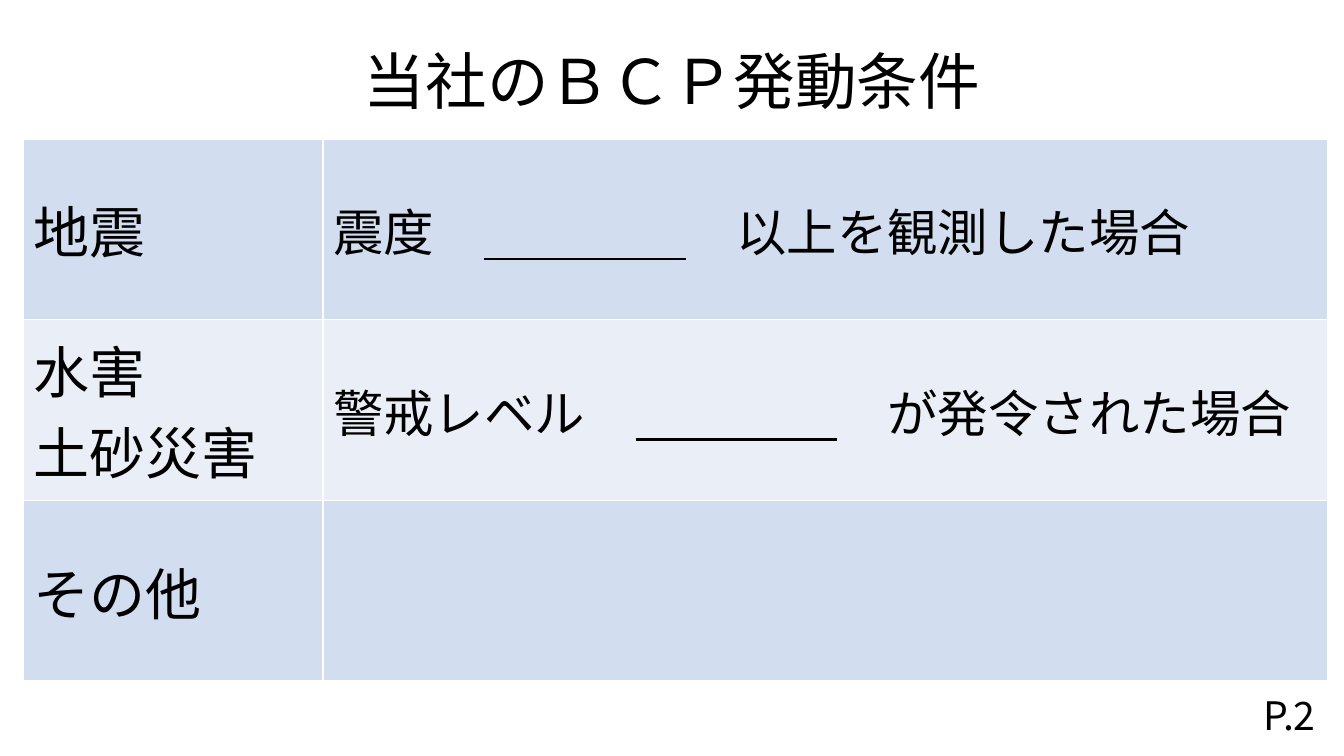
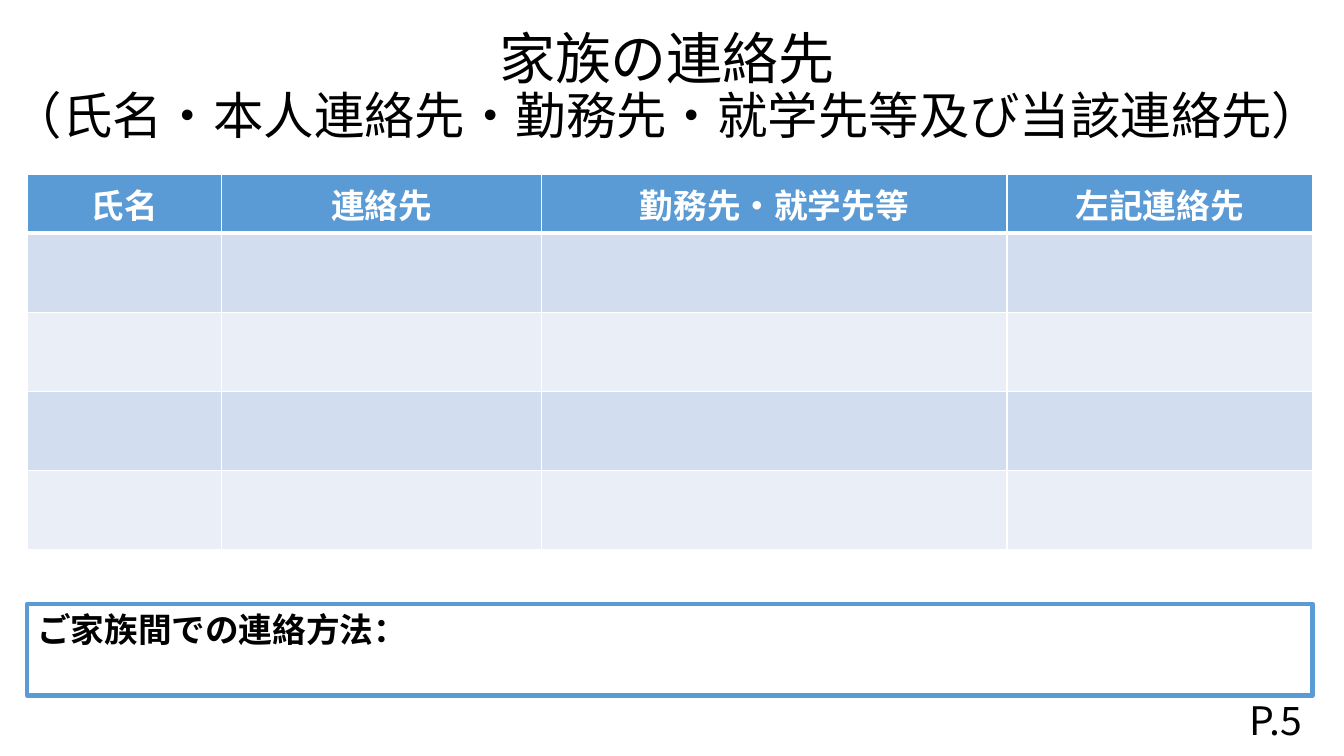
from dataclasses import dataclass

from lxml import etree
from pptx import Presentation
from pptx import util as u
from pptx.dml.color import RGBColor
from pptx.enum import shapes, text
from pptx.oxml import ns

SLIDE_WIDTH, SLIDE_HEIGHT = u.Inches(13.33), u.Inches(7.5)
TITLE_ONLY = 5


@dataclass(frozen=True)
class Theme:
    typeface: str = "Noto Sans CJK JP"
    ink: str = "000000"
    paper: str = "FFFFFF"
    accent: str = "5B9BD5"
    bands: tuple = ("D2DEEF", "EAEFF7")
    title: int = 44
    heading: int = 40
    body: int = 36
    page: int = 28
    label: int = 24
    rule: int = 1
    thick_rule: int = 3


THEME = Theme()


def region(left, top, width, height):
    """Turn percentages of the slide's size into a position and a size."""
    return (int(SLIDE_WIDTH * left / 100), int(SLIDE_HEIGHT * top / 100),
            int(SLIDE_WIDTH * width / 100), int(SLIDE_HEIGHT * height / 100))


def divide(total, weights):
    return [int(total * weight / sum(weights)) for weight in weights]


def set_fill(target, color):
    target.fill.solid()
    target.fill.fore_color.rgb = RGBColor.from_string(color)


def set_font(font, size, color=THEME.ink, bold=False):
    """Style Latin and East Asian characters alike."""
    font.size, font.bold = u.Pt(size), bold
    font.color.rgb = RGBColor.from_string(color)
    font.name = THEME.typeface
    etree.SubElement(font._element, ns.qn("a:ea"), typeface=THEME.typeface)


def write(frame, lines, size, color=THEME.ink, bold=False, align=text.PP_ALIGN.LEFT):
    """Write one paragraph a line; a line is a string or (before, blank, after)."""
    for index, line in enumerate(lines):
        paragraph = frame.add_paragraph() if index else frame.paragraphs[0]
        paragraph.alignment = align
        set_font(paragraph.font, size, color, bold)
        parts = (line,) if isinstance(line, str) else line
        for position, part in enumerate(parts):
            run = paragraph.add_run()
            run.text = part
            if position == 1:
                run.font.underline = True


def add_titled_slide(presentation, box, lines):
    """Add a slide whose title has one (text, size) pair a line."""
    slide = presentation.slides.add_slide(presentation.slide_layouts[TITLE_ONLY])
    title = slide.shapes.title
    title.left, title.top, title.width, title.height = region(*box)
    frame = title.text_frame
    frame.word_wrap, frame.auto_size = True, text.MSO_AUTO_SIZE.NONE
    frame.vertical_anchor = text.MSO_ANCHOR.MIDDLE
    paragraph = frame.paragraphs[0]
    paragraph.alignment, paragraph.line_spacing = text.PP_ALIGN.CENTER, 0.9
    for index, (words, size) in enumerate(lines):
        if index:
            paragraph.add_line_break()
        run = paragraph.add_run()
        run.text = words
        set_font(run.font, size)
    return slide


def set_borders(cell, bottom=THEME.rule):
    properties = cell._tc.get_or_add_tcPr()
    widths = {"lnL": THEME.rule, "lnR": THEME.rule, "lnT": THEME.rule, "lnB": bottom}
    for side, width in widths.items():
        line = etree.SubElement(properties, ns.qn(f"a:{side}"), w=str(u.Pt(width)))
        fill = etree.SubElement(line, ns.qn("a:solidFill"))
        etree.SubElement(fill, ns.qn("a:srgbClr"), val=THEME.paper)


def add_banded_table(slide, box, column_weights, row_weights, header=False):
    left, top, width, height = region(*box)
    table = slide.shapes.add_table(len(row_weights), len(column_weights),
                                   left, top, width, height).table
    table.first_row, table.horz_banding = header, True
    for column, size in zip(table.columns, divide(width, column_weights)):
        column.width = size
    for index, (row, size) in enumerate(zip(table.rows, divide(height, row_weights))):
        row.height = size
        is_header = header and index == 0
        color = THEME.accent if is_header else THEME.bands[(index - header) % 2]
        for cell in row.cells:
            set_borders(cell, THEME.thick_rule if is_header else THEME.rule)
            set_fill(cell, color)
    return table


def add_page_number(slide, left, top, number):
    frame = slide.shapes.add_textbox(*region(left, top, 22.5, 5.33)).text_frame
    frame.word_wrap, frame.vertical_anchor = True, text.MSO_ANCHOR.MIDDLE
    write(frame, [f"P.{number}"], THEME.page, align=text.PP_ALIGN.RIGHT)


def add_note_box(slide, box, label):
    shape = slide.shapes.add_shape(shapes.MSO_SHAPE.RECTANGLE, *region(*box))
    shape.shadow.inherit = False
    set_fill(shape, THEME.paper)
    shape.line.color.rgb = RGBColor.from_string(THEME.accent)
    shape.line.width = u.Pt(THEME.thick_rule)
    shape.text_frame.vertical_anchor = text.MSO_ANCHOR.TOP
    write(shape.text_frame, [label], THEME.label, bold=True)


def add_activation_slide(presentation):
    slide = add_titled_slide(presentation, (6.9, 1.5, 86.25, 19.33),
                             [("当社のＢＣＰ発動条件", THEME.title)])
    conditions = [
        (["地震"], [("震度　", "　　　　", "　以上を観測した場合")]),
        (["水害", "土砂災害"], [("警戒レベル　", "　　　　", "　が発令された場合")]),
        (["その他"], []),
    ]
    table = add_banded_table(slide, (1.75, 18.4, 97, 71.7), (2.97, 9.96),
                             [1] * len(conditions))
    for row, condition in zip(table.rows, conditions):
        for cell, lines, size in zip(row.cells, condition, (THEME.heading, THEME.body)):
            cell.vertical_anchor = text.MSO_ANCHOR.MIDDLE
            write(cell.text_frame, lines, size)
    add_page_number(slide, 76.13, 91.87, 2)


def add_family_slide(presentation):
    slide = add_titled_slide(presentation, (0, 2, 99.25, 19.33), [
        ("家族の連絡先", THEME.heading),
        ("（氏名・本人連絡先・勤務先・就学先等及び当該連絡先）", THEME.body),
    ])
    headers = ["氏名", "連絡先", "勤務先・就学先等", "左記連絡先"]
    table = add_banded_table(slide, (2.03, 23.07, 95.63, 49.33), (1.93, 3.17, 4.62, 3.03),
                             [0.56] + [0.78] * 4, header=True)
    for cell, header in zip(table.rows[0].cells, headers):
        write(cell.text_frame, [header], THEME.label, THEME.paper, True,
              text.PP_ALIGN.CENTER)
    add_page_number(slide, 75.1, 92.53, 5)
    add_note_box(slide, (2.03, 79.87, 95.63, 12.13), "ご家族間での連絡方法：")


def main():
    presentation = Presentation()
    presentation.slide_width, presentation.slide_height = SLIDE_WIDTH, SLIDE_HEIGHT
    add_activation_slide(presentation)
    add_family_slide(presentation)
    presentation.save("out.pptx")


if __name__ == "__main__":
    main()
